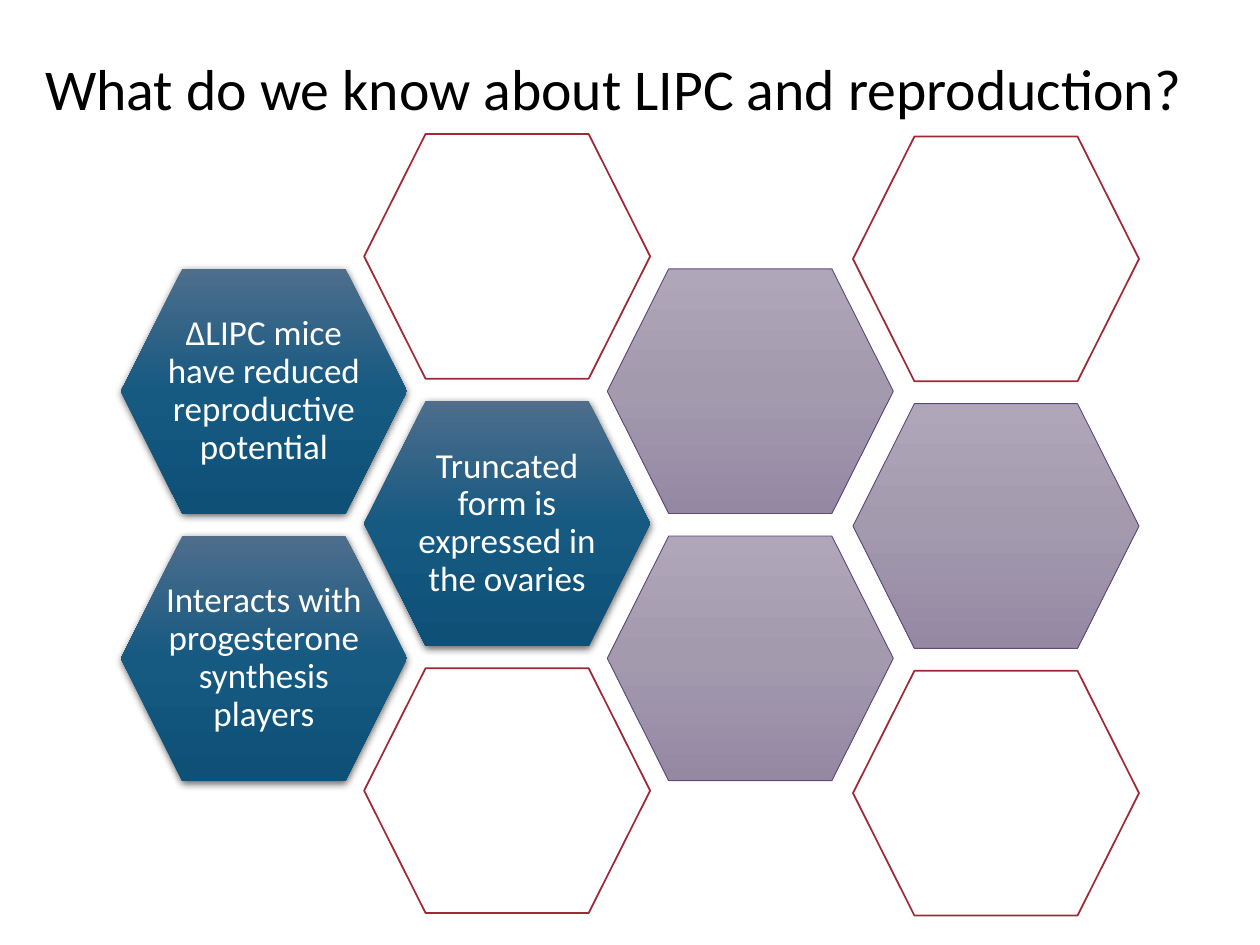
from pptx import Presentation
from pptx.dml.color import RGBColor
from pptx.enum.shapes import MSO_SHAPE
from pptx.enum.text import MSO_ANCHOR, PP_ALIGN
from pptx.oxml import parse_xml
from pptx.oxml.ns import nsdecls, qn
from pptx.util import Inches, Pt

HUES = {
    "black": "000000",
    "white": "FFFFFF",
    "red": "9F2936",
    "plum": "604878",
    "blues": ("4E6E8C", "165981", "0F5077"),
    "mauves": ("AFA6B9", "A39AAE", "9488A3"),
}
FONT = "Calibri"
WIDE, HIGH, STEP = 2.27, 1.95, 2.12


class Deck:
    """Holds the style and the current slide, and draws each kind of element."""

    def __init__(self):
        self.prs = Presentation()
        self.prs.slide_width, self.prs.slide_height = Inches(10), Inches(7.5)
        self.slide = self.prs.slides.add_slide(self.prs.slide_layouts[6])

    def label(self, frame, text, size, hue, align):
        frame.word_wrap = True
        frame.vertical_anchor = MSO_ANCHOR.MIDDLE
        frame.text = text
        par = frame.paragraphs[0]
        par.alignment, par.line_spacing = align, 0.9
        font = par.runs[0].font
        font.name, font.size = FONT, Pt(size)
        font.color.rgb = RGBColor.from_string(HUES[hue])

    def title(self, text):
        box = self.slide.shapes.add_textbox(
            Inches(0.26), Inches(0.4), Inches(9.49), Inches(0.66))
        self.label(box.text_frame, text, 33, "black", PP_ALIGN.LEFT)

    def hexa(self, left, top):
        tile = self.slide.shapes.add_shape(
            MSO_SHAPE.HEXAGON, Inches(left), Inches(top), Inches(WIDE), Inches(HIGH))
        tile.adjustments[0], tile.adjustments[1] = 0.25, 1.15
        tile.shadow.inherit = False
        return tile

    def edge(self, tile, hue, width):
        tile.line.color.rgb = RGBColor.from_string(HUES[hue])
        tile.line.width = Pt(width)

    def blend(self, tile, hues):
        tile.fill.gradient()
        tile.fill.gradient_angle = 270
        stops = "".join(
            f'<a:gs pos="{i * 50000}"><a:srgbClr val="{hue}"/></a:gs>'
            for i, hue in enumerate(HUES[hues]))
        old = next(tile.element.iter(qn("a:gsLst")))
        old.getparent().replace(
            old, parse_xml(f'<a:gsLst {nsdecls("a")}>{stops}</a:gsLst>'))

    def shade(self, tile):
        tile.element.spPr.find(qn("a:effectLst")).append(parse_xml(
            f'<a:outerShdw {nsdecls("a")} blurRad="{Pt(4.5)}" dist="{Pt(1.5)}" '
            f'dir="5400000" algn="ctr" rotWithShape="0">'
            f'<a:srgbClr val="{HUES["black"]}"><a:alpha val="63000"/></a:srgbClr>'
            f'</a:outerShdw>'))

    def fact(self, left, top, text):
        tile = self.hexa(left, top)
        self.blend(tile, "blues")
        tile.line.fill.background()
        self.shade(tile)
        frame = tile.text_frame
        frame.margin_left = frame.margin_right = 0
        frame.margin_top = frame.margin_bottom = Inches(0.03)
        self.label(frame, text, 20, "white", PP_ALIGN.CENTER)
        frame.paragraphs[0].space_after = Pt(7)

    def mauve(self, left, top):
        tile = self.hexa(left, top)
        self.blend(tile, "mauves")
        self.edge(tile, "plum", 0.5)

    def blank(self, left, top):
        tile = self.hexa(left, top)
        tile.fill.solid()
        tile.fill.fore_color.rgb = RGBColor.from_string(HUES["white"])
        self.edge(tile, "red", 1)

    def stack(self, left, top, tiles):
        for row, tile in enumerate(tiles):
            spot = left, top + row * STEP
            if tile == "blank":
                self.blank(*spot)
            elif tile == "mauve":
                self.mauve(*spot)
            else:
                self.fact(*spot, tile)


def main():
    deck = Deck()
    deck.title("What do we know about LIPC and reproduction?")
    deck.stack(0.96, 2.13, ["ΔLIPC mice have reduced reproductive potential",
                            "Interacts with progesterone synthesis players"])
    deck.stack(2.89, 1.06, ["blank", "Truncated form is expressed in the ovaries",
                            "blank"])
    deck.stack(4.82, 2.13, ["mauve", "mauve"])
    deck.stack(6.77, 1.08, ["blank", "mauve", "blank"])
    deck.prs.save("out.pptx")


if __name__ == "__main__":
    main()
